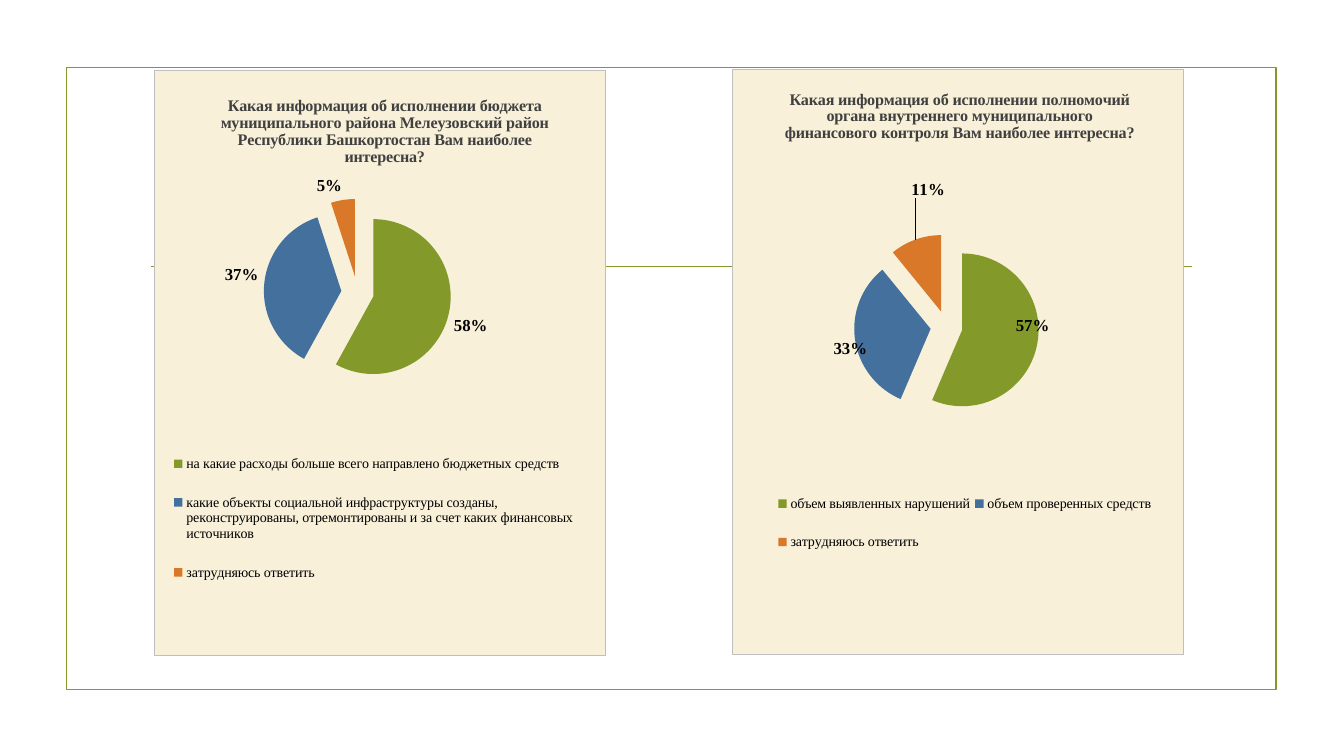
from dataclasses import dataclass

from lxml import etree
from pptx import Presentation
from pptx.chart.data import CategoryChartData
from pptx.dml.color import RGBColor
from pptx.enum.chart import XL_CHART_TYPE, XL_LABEL_POSITION, XL_LEGEND_POSITION
from pptx.enum.shapes import MSO_CONNECTOR, MSO_SHAPE
from pptx.oxml import parse_xml
from pptx.oxml.ns import nsdecls, qn
from pptx.util import Inches, Pt

PIE = XL_CHART_TYPE.PIE
OUTSIDE_END = XL_LABEL_POSITION.OUTSIDE_END
BOTTOM = XL_LEGEND_POSITION.BOTTOM
RECTANGLE = MSO_SHAPE.RECTANGLE
STRAIGHT = MSO_CONNECTOR.STRAIGHT


@dataclass(frozen=True)
class Theme:
    font: str = "Times New Roman"
    accent: str = "83992A"
    slices: tuple = ("83992A", "44709D", "D97828")
    panel: str = "F8F0D9"
    panel_border: str = "BFBFBF"
    title: str = "404040"
    text: str = "000000"
    title_size: float = 11.5
    label_size: float = 12
    legend_size: float = 10
    rule_width: float = 1.25
    border_width: float = 0.75
    explosion: int = 21


@dataclass(frozen=True)
class Survey:
    """A question with its answers; layouts are shares of the chart's box."""
    question: str
    answers: dict
    title_at: tuple
    plot_at: tuple
    legend_at: tuple
    label_shifts: tuple = ()


THEME = Theme()
SLIDE_W, SLIDE_H = 13.33, 7.5
FRAME = (0.66, 0.67, 12, 6.17)
CHART_W, CHART_H = 4.48, 5.82
LEFT_BOX = (1.53, 0.69, CHART_W, CHART_H)
RIGHT_BOX = (7.26, 0.68, CHART_W, CHART_H)

BUDGET = Survey(
    "Какая информация об исполнении бюджета муниципального района "
    "Мелеузовский район Республики Башкортостан Вам наиболее интересна?",
    {
        "на какие расходы больше всего направлено бюджетных средств": 58,
        "какие объекты социальной инфраструктуры созданы, реконструированы, "
        "отремонтированы и за счет каких финансовых источников": 37,
        "затрудняюсь ответить": 5,
    },
    title_at=(0.14, 0.04),
    plot_at=(0.24, 0.22, 0.42, 0.32),
    legend_at=(0.03, 0.62, 0.91, 0.29),
)
CONTROL = Survey(
    "Какая информация об исполнении полномочий органа внутреннего "
    "муниципального финансового контроля Вам наиболее интересна?",
    {
        "объем выявленных нарушений": 57,
        "объем проверенных средств": 33,
        "затрудняюсь ответить": 11,
    },
    title_at=(0.11, 0.03),
    plot_at=(0.27, 0.28, 0.41, 0.32),
    legend_at=(0.09, 0.69, 0.85, 0.17),
    label_shifts=((-0.06, -0.05), (0.04, 0), (0.07, -0.06)),
)


def rgb(color):
    return RGBColor.from_string(color)


def format_font(font, size, color=THEME.text, bold=False):
    font.name, font.size, font.bold = THEME.font, Pt(size), bold
    font.color.rgb = rgb(color)


def write_text(frame, text, **font_format):
    frame.text = text
    format_font(frame.paragraphs[0].runs[0].font, **font_format)


def place(part, box, index=1, edge=True, inner=False):
    """Give a chart part a manual layout, as its child number index."""
    for old in part.findall(qn("c:layout")):
        part.remove(old)
    layout = parse_xml(f"<c:layout {nsdecls('c')}><c:manualLayout/></c:layout>")
    manual = layout[0]
    settings = [("layoutTarget", "inner")] if inner else []
    if edge:
        settings += [("xMode", "edge"), ("yMode", "edge")]
    settings += zip("xywh", box)
    for tag, value in settings:
        etree.SubElement(manual, qn(f"c:{tag}")).set("val", str(value))
    part.insert(index, layout)


def style_panel(chart):
    area = chart._chartSpace.find(qn("c:chart"))
    area.addprevious(parse_xml(f'<c:roundedCorners {nsdecls("c")} val="0"/>'))
    area.addnext(parse_xml(
        f'<c:spPr {nsdecls("c", "a")}>'
        f'<a:solidFill><a:srgbClr val="{THEME.panel}"/></a:solidFill>'
        f'<a:ln w="{Pt(THEME.border_width)}"><a:solidFill>'
        f'<a:srgbClr val="{THEME.panel_border}"/></a:solidFill></a:ln></c:spPr>'))


def style_slices(series, label_shifts):
    series._element.find(qn("c:tx")).addnext(parse_xml(
        f'<c:explosion {nsdecls("c")} val="{THEME.explosion}"/>'))
    for index, color in enumerate(THEME.slices):
        fill = series.points[index].format.fill
        fill.solid()
        fill.fore_color.rgb = rgb(color)

    labels = series.data_labels
    labels.show_value = True
    labels.number_format, labels.number_format_is_linked = '0"%"', False
    labels.position = OUTSIDE_END
    format_font(labels.font, THEME.label_size, bold=True)
    for index, shift in enumerate(label_shifts):
        label = series.points[index].data_label
        label.position = OUTSIDE_END
        format_font(label.font, THEME.label_size, bold=True)
        place(labels._element.findall(qn("c:dLbl"))[index], shift, edge=False)


def add_survey(slide, box, survey):
    data = CategoryChartData()
    data.categories = list(survey.answers)
    data.add_series("Series 1", list(survey.answers.values()))
    chart = slide.shapes.add_chart(PIE, *map(Inches, box), data).chart
    format_font(chart.font, THEME.legend_size)
    style_panel(chart)

    chart.has_title = True
    write_text(chart.chart_title.text_frame, survey.question,
               size=THEME.title_size, color=THEME.title, bold=True)
    place(chart.chart_title._element, survey.title_at)

    chart.has_legend = True
    chart.legend.position = BOTTOM
    chart.legend.include_in_layout = False
    format_font(chart.legend.font, THEME.legend_size)
    place(chart.legend._element, survey.legend_at)

    plot = chart.plots[0]
    plot.vary_by_categories = True
    place(plot._element.getparent(), survey.plot_at, index=0, inner=True)
    style_slices(plot.series[0], survey.label_shifts)


def add_backdrop(slide, box):
    """Draw the outline and the rule that runs behind the charts."""
    left, top, width, height = box
    outline = slide.shapes.add_shape(RECTANGLE, *map(Inches, box))
    outline.shadow.inherit = False
    outline.fill.background()

    rule_y = top + 0.32 * height
    ends = (left + 0.07 * width, rule_y, left + 0.93 * width, rule_y)
    rule = slide.shapes.add_connector(STRAIGHT, *map(Inches, ends))
    etree.SubElement(rule._element.spPr, qn("a:effectLst"))
    for part in (outline, rule):
        part.line.color.rgb = rgb(THEME.accent)
        part.line.width = Pt(THEME.rule_width)
    # The effect list has to follow the line settings.
    rule._element.spPr.append(rule._element.spPr.find(qn("a:effectLst")))


def main():
    deck = Presentation()
    deck.slide_width, deck.slide_height = Inches(SLIDE_W), Inches(SLIDE_H)
    slide = deck.slides.add_slide(deck.slide_layouts[6])
    add_backdrop(slide, FRAME)
    add_survey(slide, LEFT_BOX, BUDGET)
    add_survey(slide, RIGHT_BOX, CONTROL)
    deck.save("out.pptx")


if __name__ == "__main__":
    main()
